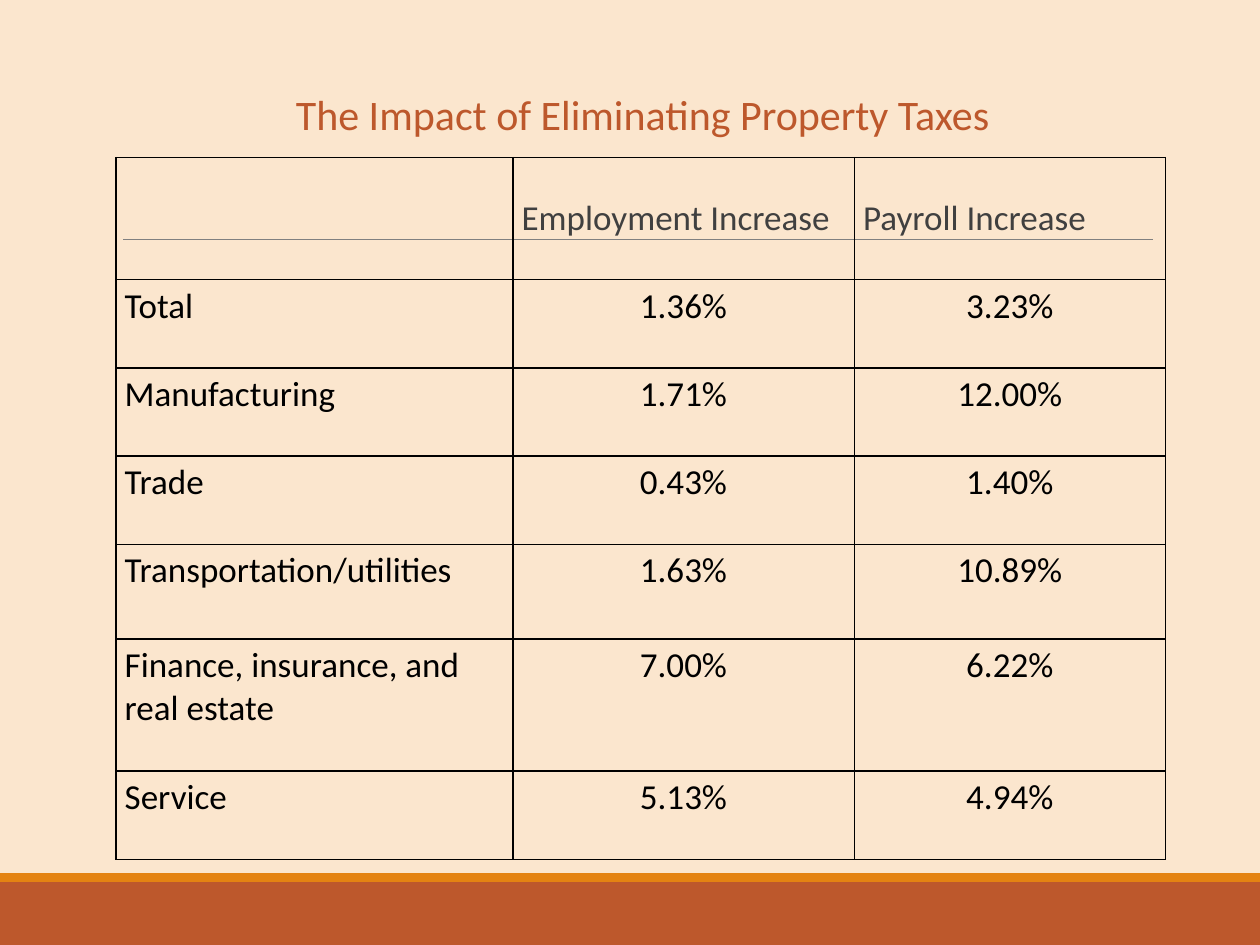
import pptx
import pptx.dml.color
import pptx.enum.shapes
import pptx.enum.text
import pptx.oxml
import pptx.oxml.ns
import pptx.util
from lxml import etree

Inches = pptx.util.Inches
Pt = pptx.util.Pt
RGBColor = pptx.dml.color.RGBColor
ALIGN = pptx.enum.text.PP_ALIGN
ANCHOR = pptx.enum.text.MSO_ANCHOR

CREAM = RGBColor(0xFB, 0xE6, 0xCE)
RUST = RGBColor(0xBD, 0x58, 0x2C)
ORANGE = RGBColor(0xE4, 0x83, 0x12)
GRAY = RGBColor(0x80, 0x80, 0x80)
CHARCOAL = RGBColor(0x40, 0x40, 0x40)
BLACK = RGBColor(0, 0, 0)

HEADERS = ["", "Employment Increase", "Payroll Increase"]
IMPACTS = [
    ["Total", "1.36%", "3.23%"],
    ["Manufacturing", "1.71%", "12.00%"],
    ["Trade", "0.43%", "1.40%"],
    ["Transportation/utilities", "1.63%", "10.89%"],
    ["Finance, insurance, and real estate", "7.00%", "6.22%"],
    ["Service", "5.13%", "4.94%"],
]
COLUMN_WIDTHS = [3.15, 2.71, 2.47]
ROW_HEIGHTS = [0.97, 0.7, 0.7, 0.7, 0.75, 1.05, 0.7]


class SlideBuilder:
    font_name = "Calibri"
    title_size = Pt(24)
    table_size = Pt(20)
    border_width = Pt(1)

    def __init__(self, slide):
        self.slide = slide

    def background(self, color):
        fill = self.slide.background.fill
        fill.solid()
        fill.fore_color.rgb = color

    def band(self, top, height, color):
        shape = self.slide.shapes.add_shape(
            pptx.enum.shapes.MSO_SHAPE.RECTANGLE,
            0, Inches(top), Inches(10), Inches(height))
        shape.shadow.inherit = False
        shape.fill.solid()
        shape.fill.fore_color.rgb = color
        shape.line.fill.background()

    def rule(self, left, right, top, color):
        connector = self.slide.shapes.add_connector(
            pptx.enum.shapes.MSO_CONNECTOR.STRAIGHT,
            Inches(left), Inches(top), Inches(right), Inches(top))
        connector.line.color.rgb = color
        connector.line.width = Pt(0.5)
        etree.SubElement(connector._element.spPr, pptx.oxml.ns.qn("a:effectLst"))

    def set_text(self, paragraph, text, size, color, alignment=ALIGN.LEFT):
        paragraph.text = text
        paragraph.alignment = alignment
        paragraph.font.name = self.font_name
        paragraph.font.size = size
        paragraph.font.color.rgb = color

    def title(self, left, top, width, height, text):
        box = self.slide.shapes.add_textbox(
            Inches(left), Inches(top), Inches(width), Inches(height))
        frame = box.text_frame
        frame.word_wrap = True
        frame.auto_size = pptx.enum.text.MSO_AUTO_SIZE.SHAPE_TO_FIT_TEXT
        self.set_text(frame.paragraphs[0], text, self.title_size, RUST)

    def style_cell(self, cell):
        cell.margin_left = cell.margin_right = Inches(0.07)
        cell.margin_top = cell.margin_bottom = Inches(0.04)
        properties = cell._tc.get_or_add_tcPr()
        for side in ("lnL", "lnR", "lnT", "lnB"):
            properties.append(pptx.oxml.parse_xml(
                f'<a:{side} {pptx.oxml.ns.nsdecls("a")} w="{self.border_width}">'
                f'<a:solidFill><a:srgbClr val="{BLACK}"/></a:solidFill></a:{side}>'))
        cell.fill.background()

    def table(self, left, top, rows, widths, heights):
        table = self.slide.shapes.add_table(
            len(rows), len(widths), Inches(left), Inches(top),
            Inches(sum(widths)), Inches(sum(heights))).table
        table.first_row = table.horz_banding = False
        for column, width in zip(table.columns, widths):
            column.width = Inches(width)
        for row, height in zip(table.rows, heights):
            row.height = Inches(height)
        for row_index, values in enumerate(rows):
            is_header = row_index == 0
            for column_index, value in enumerate(values):
                cell = table.cell(row_index, column_index)
                self.style_cell(cell)
                cell.vertical_anchor = ANCHOR.MIDDLE if is_header else ANCHOR.TOP
                is_number = not is_header and column_index > 0
                self.set_text(cell.text_frame.paragraphs[0], value, self.table_size,
                              CHARCOAL if is_header else BLACK,
                              ALIGN.CENTER if is_number else ALIGN.LEFT)


def main():
    presentation = pptx.Presentation()
    presentation.slide_width = Inches(10)
    presentation.slide_height = Inches(7.5)
    builder = SlideBuilder(
        presentation.slides.add_slide(presentation.slide_layouts[6]))
    builder.background(CREAM)
    builder.band(7, 0.5, RUST)
    builder.band(6.93, 0.07, ORANGE)
    builder.rule(0.98, 9.15, 1.9, GRAY)
    builder.title(2.25, 0.65, 6, 0.5, "The Impact of Eliminating Property Taxes")
    builder.table(0.92, 1.25, [HEADERS] + IMPACTS, COLUMN_WIDTHS, ROW_HEIGHTS)
    presentation.save("out.pptx")


if __name__ == "__main__":
    main()
